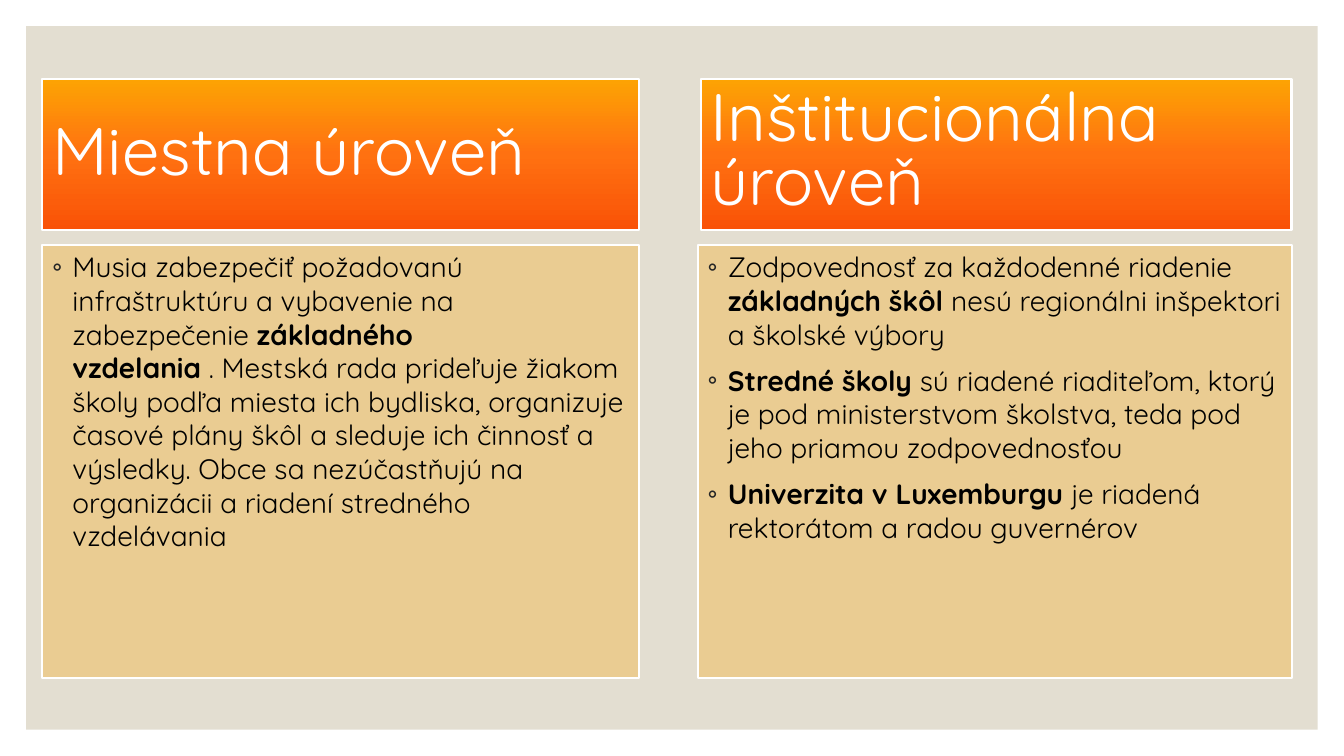
from copy import deepcopy

from lxml import etree
from pptx import Presentation
from pptx.dml.color import RGBColor
from pptx.enum.shapes import MSO_SHAPE
from pptx.enum.text import MSO_ANCHOR, PP_ALIGN
from pptx.oxml.ns import qn
from pptx.util import Inches, Pt

RECTANGLE = MSO_SHAPE.RECTANGLE
MIDDLE = MSO_ANCHOR.MIDDLE
TOP = MSO_ANCHOR.TOP
LEFT = PP_ALIGN.LEFT

WHITE = RGBColor(0xFF, 0xFF, 0xFF)
BLACK = RGBColor(0, 0, 0)
SAND = RGBColor(0xE3, 0xDE, 0xD1)
AMBER = RGBColor(0xFD, 0xA4, 0x03)
HEADING_GRADIENT = [
    (0, RGBColor(0xF9, 0x52, 0x07)),
    (0.5, RGBColor(0xFF, 0x71, 0x11)),
    (1, AMBER),
]
BULLET_COLOR = "262626"
BULLET_FONT = "Calibri"
FONT = "Quicksand"
NBSP = chr(160)

LEVELS = [
    {
        "heading": "Miestna úroveň",
        "heading_span": (0.42, 5.92),
        "heading_spacing": 0.9,
        "body_span": (0.42, 5.92),
        "points": [
            [
                ("Musia zabezpečiť požadovanú infraštruktúru a vybavenie "
                 f"na zabezpečenie{NBSP}", False),
                ("základného vzdelania", True),
                (f"{NBSP}.{NBSP}Mestská rada{NBSP}prideľuje žiakom školy podľa miesta "
                 "ich bydliska, organizuje časové plány škôl a sleduje ich činnosť "
                 f"a výsledky.{NBSP}Obce sa nezúčastňujú na organizácii a riadení "
                 "stredného vzdelávania", False),
            ],
        ],
    },
    {
        "heading": "Inštitucionálna úroveň",
        "heading_span": (6.95, 5.86),
        "heading_spacing": 0.8,
        "body_span": (6.92, 5.89),
        "points": [
            [
                ("Zodpovednosť za každodenné riadenie ", False),
                ("základných škôl ", True),
                ("nesú regionálni inšpektori a školské výbory", False),
            ],
            [
                ("Stredné školy ", True),
                ("sú riadené riaditeľom, ktorý je pod ministerstvom školstva, "
                 "teda pod jeho priamou zodpovednosťou", False),
            ],
            [
                ("Univerzita v Luxemburgu ", True),
                ("je riadená rektorátom a radou guvernérov", False),
            ],
        ],
    },
]

prs = Presentation()
prs.slide_width = Inches(13.33)
prs.slide_height = Inches(7.5)
slide = prs.slides.add_slide(prs.slide_layouts[6])


def add_panel(span, top, height, anchor):
    left, width = span
    panel = slide.shapes.add_shape(
        RECTANGLE, Inches(left), Inches(top), Inches(width), Inches(height))
    panel.shadow.inherit = False
    panel.line.color.rgb = WHITE
    panel.line.width = Pt(1.5)
    panel.text_frame.word_wrap = True
    panel.text_frame.vertical_anchor = anchor
    return panel


def add_text(paragraph, text, size, color, bold=False):
    run = paragraph.add_run()
    run.text = text
    run.font.name = FONT
    run.font.size = Pt(size)
    run.font.color.rgb = color
    run.font.bold = bold


backdrop = add_panel((0.26, 12.81), 0.26, 6.98, TOP)
backdrop.fill.solid()
backdrop.fill.fore_color.rgb = SAND
backdrop.line.fill.background()

for level in LEVELS:
    heading = add_panel(level["heading_span"], 0.78, 1.5, MIDDLE)
    heading.fill.gradient()
    heading.fill.gradient_angle = 90
    stop_list = heading._element.spPr.find(".//" + qn("a:gsLst"))
    stop_list.append(deepcopy(stop_list[0]))
    for stop, (position, color) in zip(heading.fill.gradient_stops, HEADING_GRADIENT):
        stop.position = position
        stop.color.rgb = color
    title = heading.text_frame.paragraphs[0]
    title.alignment = LEFT
    title.line_spacing = level["heading_spacing"]
    add_text(title, level["heading"], 48, WHITE)

    body = add_panel(level["body_span"], 2.43, 4.3, TOP)
    body.fill.solid()
    body.fill.fore_color.rgb = AMBER
    fill_color = body._element.spPr.find(qn("a:solidFill"))[0]
    etree.SubElement(fill_color, qn("a:alpha"), val="30000")

    for index, point in enumerate(level["points"]):
        frame = body.text_frame
        paragraph = frame.add_paragraph() if index else frame.paragraphs[0]
        paragraph.alignment = LEFT
        paragraph.line_spacing = 1.0
        paragraph.space_before = Pt(9 if index else 0)
        properties = paragraph._p.get_or_add_pPr()
        properties.set("marL", str(Inches(0.2)))
        properties.set("indent", str(-Inches(0.2)))
        bullet_color = etree.SubElement(properties, qn("a:buClr"))
        etree.SubElement(bullet_color, qn("a:srgbClr"), val=BULLET_COLOR)
        etree.SubElement(properties, qn("a:buFont"), typeface=BULLET_FONT)
        etree.SubElement(properties, qn("a:buChar"), char="◦")
        for text, bold in point:
            add_text(paragraph, text, 20, BLACK, bold)

prs.save("out.pptx")
